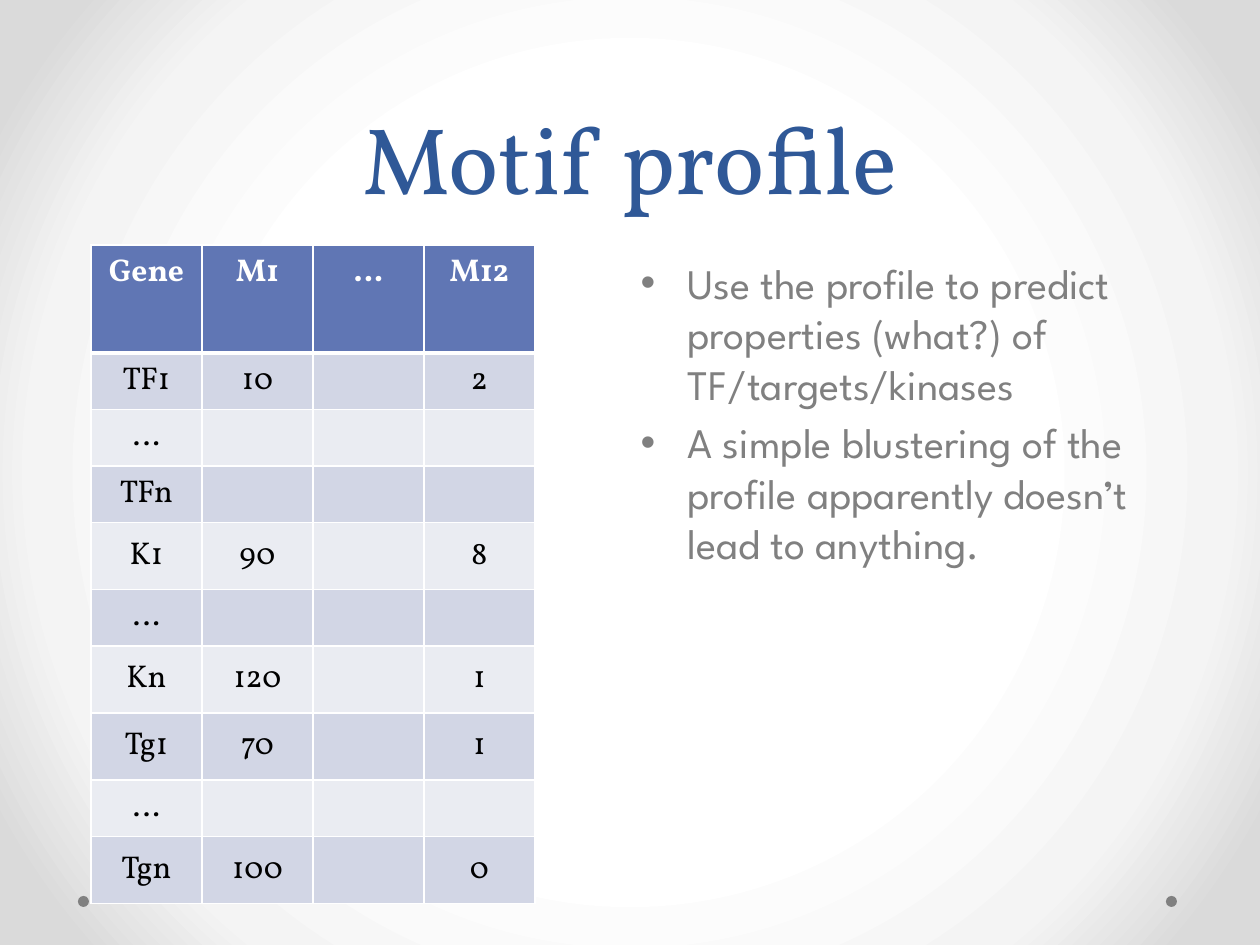
from lxml.etree import SubElement
from pptx import Presentation
from pptx.dml.color import RGBColor
from pptx.enum.shapes import MSO_SHAPE
from pptx.enum.text import MSO_ANCHOR, MSO_AUTO_SIZE, PP_ALIGN
from pptx.oxml import parse_xml
from pptx.oxml.ns import nsdecls, qn
from pptx.util import Emu, Pt

PX_PER_INCH = 126
GENE_ROWS = [
    ["Gene", "M1", "…", "M12"],
    ["TF1", "10", "", "2"],
    ["…", "", "", ""],
    ["TFn", "", "", ""],
    ["K1", "90", "", "8"],
    ["…", "", "", ""],
    ["Kn", "120", "", "1"],
    ["Tg1", "70", "", "1"],
    ["…", "", "", ""],
    ["Tgn", "100", "", "0"],
]
ROW_HEIGHTS = [108, 44, 44, 44, 67, 44, 67, 67, 44, 67]
BULLETS = [
    "Use the profile to predict properties (what?) of TF/targets/kinases",
    "A simple blustering of the profile apparently doesn’t lead to anything.",
]


def px(length):
    return Emu(round(length * 914400 / PX_PER_INCH))


def color(code):
    return RGBColor.from_string(code)


class SlideBuilder:
    serif, sans = "Vollkorn", "League Spartan"
    navy, grey, white, black = "2F5897", "808080", "FFFFFF", "000000"
    header_fill, bands = "6076B4", ("EAECF2", "D2D6E5")

    def __init__(self, page):
        self.page = page

    def background(self, stops):
        """Radial gradient from the middle outwards; stops are (percent, colour)."""
        marks = "".join(
            f'<a:gs pos="{percent * 1000}"><a:srgbClr val="{code}"/></a:gs>'
            for percent, code in stops
        )
        gradient = parse_xml(
            f'<p:bg {nsdecls("p", "a")}><p:bgPr><a:gradFill rotWithShape="1">'
            f'<a:gsLst>{marks}</a:gsLst><a:path path="circle">'
            '<a:fillToRect l="50000" t="50000" r="50000" b="50000"/></a:path>'
            '</a:gradFill><a:effectLst/></p:bgPr></p:bg>'
        )
        self.page.element.cSld.insert(0, gradient)

    def dot(self, left, top, size):
        shape = self.page.shapes.add_shape(
            MSO_SHAPE.OVAL, px(left), px(top), px(size), px(size))
        shape.shadow.inherit = False
        shape.fill.solid()
        shape.fill.fore_color.rgb = color(self.grey)
        shape.line.fill.background()

    def style(self, paragraph, font, size, code, bold=False):
        for span in paragraph.runs:
            span.font.name = font
            span.font.size = Pt(size)
            span.font.bold = bold
            span.font.color.rgb = color(code)

    def place(self, box, left, top, width, height):
        box.left, box.top = px(left), px(top)
        box.width, box.height = px(width), px(height)
        box.text_frame.word_wrap = True
        box.text_frame.auto_size = MSO_AUTO_SIZE.NONE

    def title(self, text, *bounds):
        box = self.page.shapes.title
        self.place(box, *bounds)
        frame = box.text_frame
        frame.text = text
        frame.vertical_anchor = MSO_ANCHOR.BOTTOM
        paragraph = frame.paragraphs[0]
        paragraph.alignment = PP_ALIGN.CENTER
        paragraph.line_spacing = Pt(58)
        self.style(paragraph, self.serif, 54, self.navy)

    def bullets(self, items, *bounds):
        box = self.page.placeholders[1]
        self.place(box, *bounds)
        frame = box.text_frame
        frame.text = "\n".join(items)
        frame.vertical_anchor = MSO_ANCHOR.TOP
        for paragraph in frame.paragraphs:
            properties = paragraph._p.get_or_add_pPr()
            properties.set("marL", str(px(47)))
            properties.set("indent", str(px(-47)))
            SubElement(properties, qn("a:buChar"), char="•")
            self.style(paragraph, self.sans, 24, self.grey)

    def borders(self, cell, bottom, top):
        """White cell lines; bottom and top widths are in points."""
        properties = cell._tc.get_or_add_tcPr()
        for side, width in (("L", 1), ("R", 1), ("T", top), ("B", bottom)):
            line = SubElement(properties, qn(f"a:ln{side}"), w=str(Pt(width)))
            fill = SubElement(line, qn("a:solidFill"))
            SubElement(fill, qn("a:srgbClr"), val=self.white)

    def table(self, rows, heights, left, top, width, height):
        columns = len(rows[0])
        grid = self.page.shapes.add_table(
            len(rows), columns, px(left), px(top), px(width), px(height)).table
        for column in grid.columns:
            column.width = px(width / columns)
        for r, (values, row_height) in enumerate(zip(rows, heights)):
            grid.rows[r].height = px(row_height)
            header = r == 0
            for c, value in enumerate(values):
                cell = grid.cell(r, c)
                self.borders(cell, bottom=3 if header else 1, top=3 if r == 1 else 1)
                cell.fill.solid()
                cell.fill.fore_color.rgb = color(
                    self.header_fill if header else self.bands[r % 2])
                cell.vertical_anchor = MSO_ANCHOR.TOP if header else MSO_ANCHOR.MIDDLE
                cell.text_frame.text = value
                paragraph = cell.text_frame.paragraphs[0]
                paragraph.alignment = PP_ALIGN.CENTER
                paragraph.font.size = Pt(18)
                self.style(paragraph, self.serif, 18,
                           self.white if header else self.black, bold=header)


def main():
    deck = Presentation()
    deck.slide_width, deck.slide_height = px(1260), px(945)
    builder = SlideBuilder(deck.slides.add_slide(deck.slide_layouts[1]))
    builder.background([(50, "FFFFFF"), (76, "F4F4F4"), (92, "DADADA")])
    for left in (1166, 78):
        builder.dot(left, 896, 11)
    builder.title("Motif profile", 63, 0, 1134, 220)
    builder.bullets(BULLETS, 628, 251, 537, 581)
    builder.table(GENE_ROWS, ROW_HEIGHTS, 91, 245, 444, 627)
    deck.save("out.pptx")


if __name__ == "__main__":
    main()
